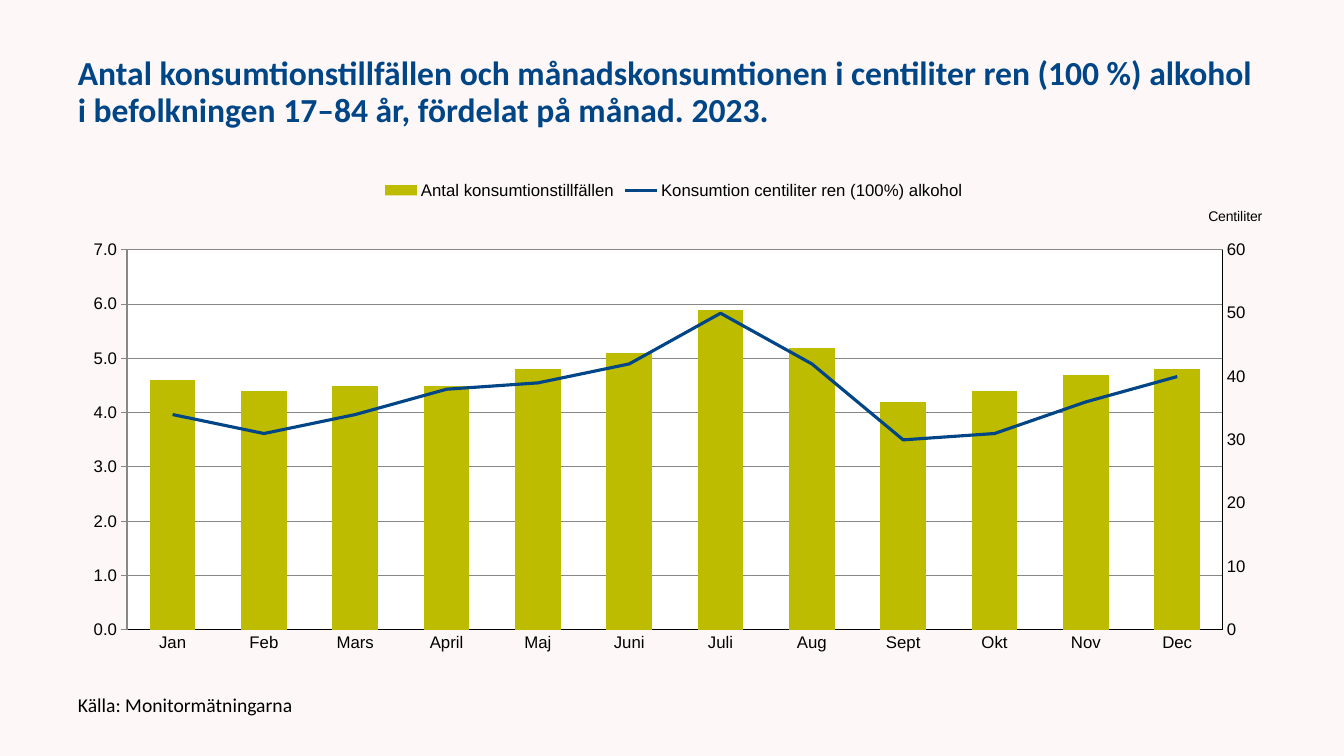
from copy import deepcopy

from pptx import Presentation
from pptx.chart.axis import ValueAxis
from pptx.chart.data import CategoryChartData
from pptx.dml.color import RGBColor
from pptx.enum.chart import XL_CHART_TYPE, XL_LEGEND_POSITION, XL_MARKER_STYLE, XL_TICK_MARK
from pptx.enum.text import MSO_ANCHOR
from pptx.oxml import parse_xml
from pptx.oxml.ns import nsdecls, qn
from pptx.util import Pt

COLUMNS = XL_CHART_TYPE.COLUMN_CLUSTERED
TOP = XL_LEGEND_POSITION.TOP
NO_MARKER = XL_MARKER_STYLE.NONE
NO_TICK = XL_TICK_MARK.NONE
MIDDLE = MSO_ANCHOR.MIDDLE

EMU_PER_PX = 914400 / 100.8
BLUE, OLIVE, BLACK, GRID = "004687", "BEBC00", "000000", "D9D9D9"
CHART_BOX = (68, 170, 1212, 499)
PLOT_BOX = (127, 250, 1096, 380)

MONTHS = ["Jan", "Feb", "Mars", "April", "Maj", "Juni",
          "Juli", "Aug", "Sept", "Okt", "Nov", "Dec"]
OCCASIONS = [4.6, 4.4, 4.5, 4.5, 4.8, 5.1, 5.9, 5.2, 4.2, 4.4, 4.7, 4.8]
CENTILITRES = [34, 31, 34, 38, 39, 42, 50, 42, 30, 31, 36, 40]


def px(length):
    """Turn pixels into EMU."""
    return round(length * EMU_PER_PX)


def color(code):
    """Turn a hex string into a colour."""
    return RGBColor.from_string(code)


def set_font(font, name, size, code, bold=False):
    """Set the face, size, colour and weight of a font."""
    font.name, font.size, font.bold = name, Pt(size), bold
    font.color.rgb = color(code)


def set_line(line, code, width):
    """Set the colour and width of a line."""
    line.color.rgb = color(code)
    line.width = Pt(width)


def remove_children(parent, tag):
    """Remove every direct child with the given tag."""
    for child in parent.findall(qn(tag)):
        parent.remove(child)


def add_text(page, bounds, text, size, code, bold=False):
    """Add a vertically centred text box with one paragraph."""
    box = page.shapes.add_textbox(*map(px, bounds))
    frame = box.text_frame
    frame.word_wrap = True
    frame.vertical_anchor = MIDDLE
    para = frame.paragraphs[0]
    para.text = text
    para.line_spacing = 0.9
    set_font(para.font, "Calibri", size, code, bold)


def make_layout(left, top, width=None, height=None):
    """Build a chart layout from slide pixels."""
    chart_left, chart_top, chart_width, chart_height = CHART_BOX
    parts = [("x", (left - chart_left) / chart_width), ("y", (top - chart_top) / chart_height)]
    target = ""
    if width:
        target = '<c:layoutTarget val="inner"/>'
        parts += [("w", width / chart_width), ("h", height / chart_height)]
    modes = '<c:xMode val="edge"/><c:yMode val="edge"/>'
    values = "".join(f'<c:{name} val="{value:.4f}"/>' for name, value in parts)
    return parse_xml(f'<c:layout {nsdecls("c")}><c:manualLayout>{target}{modes}{values}'
                     '</c:manualLayout></c:layout>')


def make_fill(fill):
    """Build the shape properties of a chart area."""
    return parse_xml(f'<c:spPr {nsdecls("c", "a")}>{fill}<a:ln><a:noFill/></a:ln></c:spPr>')


def style_axis(axis):
    """Give an axis a thin black line, no ticks and Arial labels."""
    axis.major_tick_mark = axis.minor_tick_mark = NO_TICK
    set_line(axis.format.line, BLACK, 0.75)
    set_font(axis.tick_labels.font, "Arial", 12, BLACK)


def style_value_axis(axis, title, position, top_value, step, number_format):
    """Set the scale, number format and placed title of a value axis."""
    style_axis(axis)
    axis.minimum_scale, axis.maximum_scale, axis.major_unit = 0, top_value, step
    axis.tick_labels.number_format = number_format
    axis.tick_labels.number_format_is_linked = False
    frame = axis.axis_title.text_frame
    frame.text = title
    set_font(frame.paragraphs[0].font, "Arial", 10, BLACK)
    element = axis.axis_title.element
    element.find(".//" + qn("a:bodyPr")).set("rot", "0")
    remove_children(element, "c:layout")
    element.find(qn("c:tx")).addnext(make_layout(*position))


def split_off_line(chart):
    """Move the second series to a line plot and return its value axis."""
    area = chart.element.find(".//" + qn("c:plotArea"))
    bars = area.find(qn("c:barChart"))
    series = bars.findall(qn("c:ser"))[1]
    remove_children(series, "c:invertIfNegative")
    category, value = (deepcopy(area.find(qn(tag))) for tag in ("c:catAx", "c:valAx"))
    for axis, number, other in ((category, "101", "102"), (value, "102", "101")):
        axis.find(qn("c:axId")).set("val", number)
        axis.find(qn("c:crossAx")).set("val", other)
    category.find(qn("c:delete")).set("val", "1")
    value.find(qn("c:axPos")).set("val", "r")
    value.find(qn("c:crosses")).set("val", "max")
    lines = parse_xml(f'<c:lineChart {nsdecls("c")}><c:grouping val="standard"/>'
                      '<c:varyColors val="0"/><c:marker val="1"/>'
                      '<c:axId val="101"/><c:axId val="102"/></c:lineChart>')
    lines.find(qn("c:varyColors")).addnext(series)
    bars.addnext(lines)
    area.find(qn("c:valAx")).addnext(value)
    value.addnext(category)
    return ValueAxis(value)


def style_areas(chart):
    """Place the white plot area in a transparent chart."""
    body = chart.element.find(qn("c:chart"))
    body.addnext(make_fill("<a:noFill/>"))
    area = body.find(qn("c:plotArea"))
    remove_children(area, "c:layout")
    area.insert(0, make_layout(*PLOT_BOX))
    area.append(make_fill('<a:solidFill><a:srgbClr val="FFFFFF"/></a:solidFill>'))


def add_consumption_chart(page):
    """Add the monthly columns with a line on a second axis."""
    data = CategoryChartData()
    data.categories = MONTHS
    data.add_series("Antal konsumtionstillfällen", OCCASIONS, "0.0")
    data.add_series("Konsumtion centiliter ren (100%) alkohol", CENTILITRES, "0")
    chart = page.shapes.add_chart(COLUMNS, *map(px, CHART_BOX), data).chart
    chart.has_title = False
    set_font(chart.font, "Arial", 12, BLACK)
    chart.has_legend = True
    chart.legend.position = TOP
    chart.legend.include_in_layout = False
    set_font(chart.legend.font, "Arial", 12, BLACK)

    right_axis = split_off_line(chart)
    style_areas(chart)
    style_axis(chart.category_axis)
    style_value_axis(chart.value_axis, "Antal", (81, 203), 6, 2, "0.0")
    style_value_axis(right_axis, "Centiliter", (1206, 205), 60, 10, "0")
    right_axis.has_major_gridlines = False
    set_line(chart.value_axis.major_gridlines.format.line, GRID, 0.75)

    columns, lines = chart.plots
    columns.gap_width = 100
    columns.vary_by_categories = False
    fill = columns.series[0].format.fill
    fill.solid()
    fill.fore_color.rgb = color(OLIVE)
    curve = lines.series[0]
    curve.smooth = False
    curve.marker.style = NO_MARKER
    set_line(curve.format.line, BLUE, 2.25)


def main():
    """Build and save the slide."""
    deck = Presentation()
    deck.slide_width, deck.slide_height = px(1344), px(756)
    page = deck.slides.add_slide(deck.slide_layouts[6])
    page.background.fill.solid()
    page.background.fill.fore_color.rgb = color("FEF7F7")
    add_text(page, (68, 30, 1210, 126),
             "Antal konsumtionstillfällen och månadskonsumtionen i centiliter ren (100 %) alkohol "
             "i befolkningen 17–84 år, fördelat på månad. 2023.", 24, BLUE, True)
    add_consumption_chart(page)
    add_text(page, (68, 688, 605, 37), "Källa: Monitormätningarna", 14, BLACK)
    deck.save("out.pptx")


if __name__ == "__main__":
    main()
